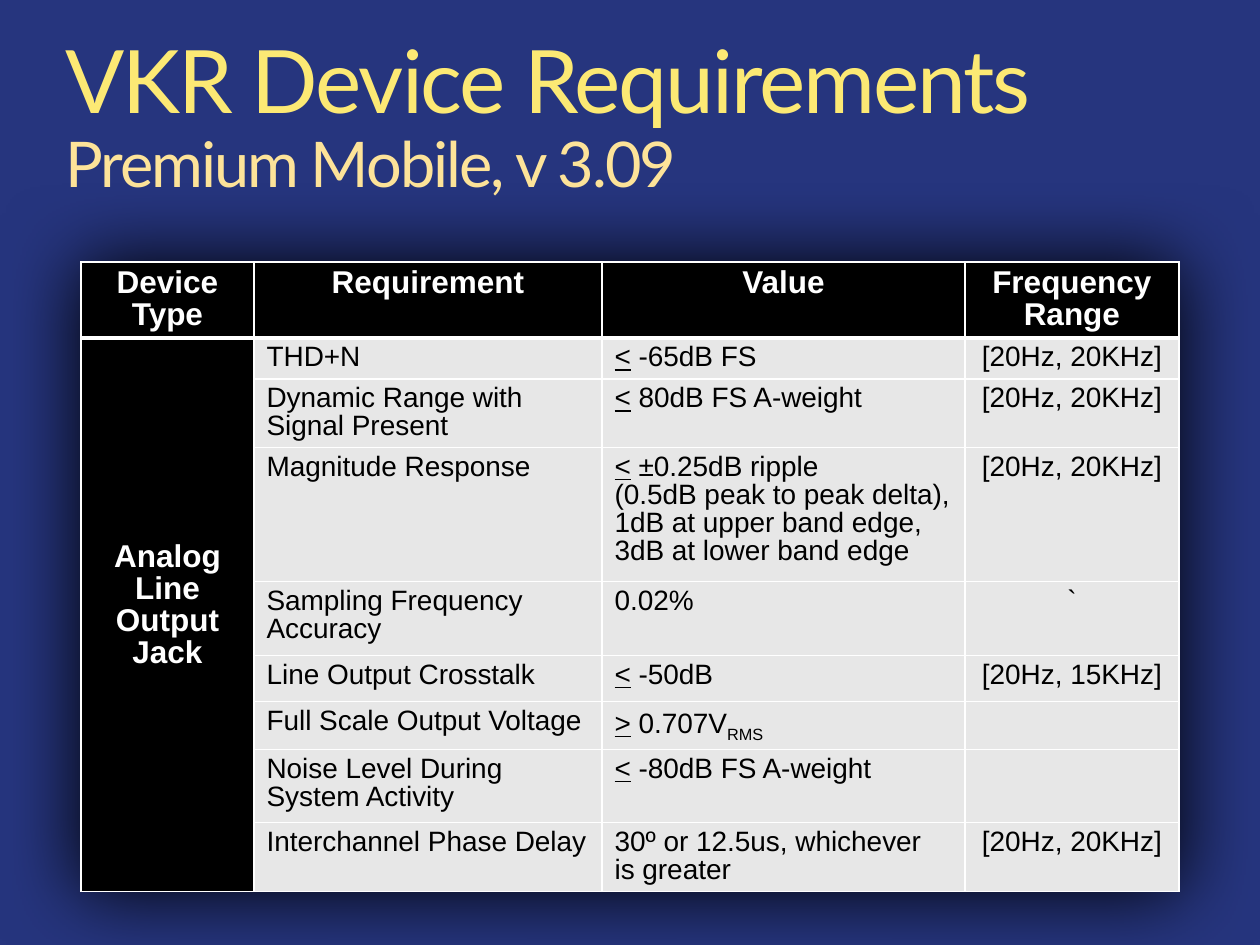
from pptx import Presentation
from pptx import util as u
from pptx.dml.color import RGBColor
from pptx.enum import text
from pptx.oxml import parse_xml
from pptx.oxml.ns import nsdecls, qn

PX = 914400 / 126
WHITE, BLACK, GREY = "FFFFFF", "000000", "E7E7E7"
COLUMN_WIDTHS = [173, 348, 363, 214]
ROW_HEIGHTS = [76, 41, 68, 134, 74, 46, 46, 73, 69]
HEADERS = ["Device Type", "Requirement", "Value", "Frequency Range"]
FULL_BAND = "[20Hz, 20KHz]"
REQUIREMENTS = [
    ("THD+N", "< -65dB FS", FULL_BAND),
    ("Dynamic Range with Signal Present", "< 80dB FS A-weight", FULL_BAND),
    ("Magnitude Response",
     "< ±0.25dB ripple\v(0.5dB peak to peak delta), 1dB at upper band edge, "
     "3dB at lower band edge", FULL_BAND),
    ("Sampling Frequency Accuracy", "0.02%", "`"),
    ("Line Output Crosstalk", "< -50dB", "[20Hz, 15KHz]"),
    ("Full Scale Output Voltage", "> 0.707VRMS", ""),
    ("Noise Level During System Activity", "< -80dB FS A-weight", ""),
    ("Interchannel Phase Delay", "30º or 12.5us, whichever\vis greater", FULL_BAND),
]


def px(length):
    return u.Emu(round(length * PX))


def color(value):
    return RGBColor.from_string(value)


def format_run(run, size, fill, font="Arial", bold=False):
    run.font.size = u.Pt(size)
    run.font.name = font
    run.font.bold = bold
    run.font.color.rgb = color(fill)


def add_title(slide):
    title = slide.shapes.title
    title.left, title.top, title.width, title.height = map(px, (53, 32, 1154, 195))
    frame = title.text_frame
    frame.text = "VKR Device Requirements\vPremium Mobile, v 3.09"
    frame.auto_size = text.MSO_AUTO_SIZE.NONE
    frame.vertical_anchor = text.MSO_ANCHOR.TOP
    paragraph = frame.paragraphs[0]
    paragraph.alignment = text.PP_ALIGN.LEFT
    paragraph.line_spacing = 0.9
    for run, size, fill in zip(paragraph.runs, (50, 36), ("FCE974", "FDE399")):
        format_run(run, size, fill, "Lato")
        run.font._element.set("spc", "-120")


def set_borders(cell, top, bottom):
    properties = cell._tc.get_or_add_tcPr()
    for side, width in (("L", 1), ("R", 1), ("T", top), ("B", bottom)):
        properties.append(parse_xml(
            f'<a:ln{side} {nsdecls("a")} w="{u.Pt(width)}"><a:solidFill>'
            f'<a:srgbClr val="{WHITE}"/></a:solidFill></a:ln{side}>'))


def style_cell(cell, row):
    set_borders(cell, 3 if row == 1 else 1, 3 if row == 0 else 1)
    cell.fill.solid()


def write_cell(cell, content, size, fill, font_color, bold=False, centered=False):
    cell.fill.fore_color.rgb = color(fill)
    paragraph = cell.text_frame.paragraphs[0]
    paragraph.line_spacing = 0.9
    paragraph.alignment = text.PP_ALIGN.CENTER if centered else text.PP_ALIGN.LEFT
    sign = content[:1] if content[:1] in ("<", ">") else ""
    subscript = "RMS" if content.endswith("RMS") else ""
    middle = content.removeprefix(sign).removesuffix(subscript)
    if sign:
        run = paragraph.add_run()
        run.text = sign
        run.font.underline = True
    for index, line in enumerate(middle.split("\v")):
        if index:
            paragraph.add_line_break()
        paragraph.add_run().text = line
    if subscript:
        run = paragraph.add_run()
        run.text = subscript
        run.font._element.set("baseline", "-25000")
    for run in paragraph.runs:
        format_run(run, size, font_color, bold=bold)


def add_shadow(table):
    effects = parse_xml(
        f'<a:effectLst {nsdecls("a")}><a:outerShdw blurRad="{px(80)}" dist="0" '
        'algn="ctr" rotWithShape="0"><a:srgbClr val="000000"/>'
        '</a:outerShdw></a:effectLst>')
    table._tbl.find(qn("a:tblPr")).insert(0, effects)


def add_requirements_table(slide):
    frame = slide.shapes.add_table(
        len(ROW_HEIGHTS), len(COLUMN_WIDTHS), px(81), px(262),
        px(sum(COLUMN_WIDTHS)), px(sum(ROW_HEIGHTS)))
    table = frame.table
    table.horz_banding = False
    add_shadow(table)
    for column, width in zip(table.columns, COLUMN_WIDTHS):
        column.width = px(width)
    for index, height in enumerate(ROW_HEIGHTS):
        table.rows[index].height = px(height)
        for cell in table.rows[index].cells:
            style_cell(cell, index)

    for column, header in enumerate(HEADERS):
        write_cell(table.cell(0, column), header, 18, BLACK, WHITE, True, True)
    for row, contents in enumerate(REQUIREMENTS, 1):
        for column, content in enumerate(contents, 1):
            write_cell(table.cell(row, column), content, 16, GREY, BLACK,
                       centered=column == 3)

    device = table.cell(1, 0)
    device.merge(table.cell(len(REQUIREMENTS), 0))
    write_cell(device, "Analog Line Output Jack", 18, BLACK, WHITE, True, True)
    device.vertical_anchor = text.MSO_ANCHOR.MIDDLE
    device.margin_bottom = px(24)


def main():
    presentation = Presentation()
    presentation.slide_width, presentation.slide_height = px(1260), px(945)
    slide = presentation.slides.add_slide(presentation.slide_layouts[5])
    slide.background.fill.solid()
    slide.background.fill.fore_color.rgb = color("26357E")
    add_title(slide)
    add_requirements_table(slide)
    presentation.save("out.pptx")


if __name__ == "__main__":
    main()
